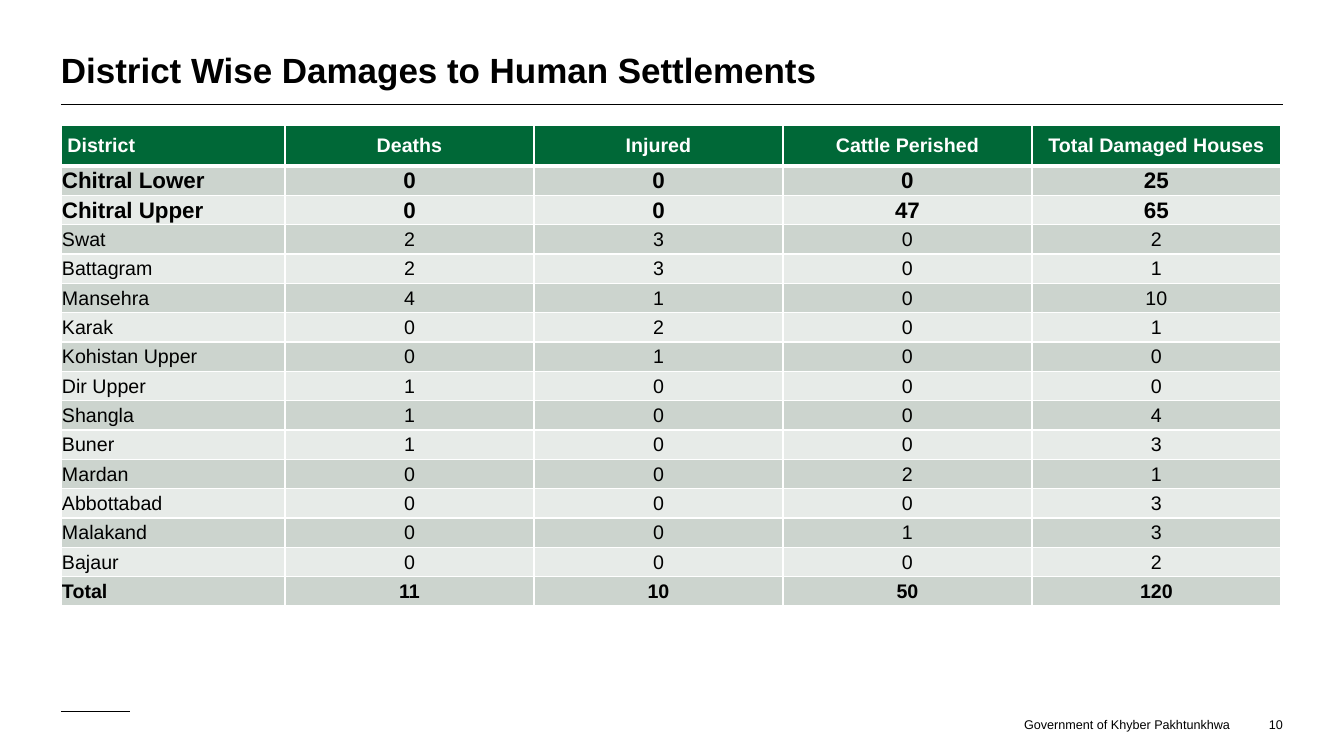
from dataclasses import dataclass

from lxml.etree import SubElement
from pptx import Presentation
from pptx.dml.color import RGBColor
from pptx.enum.shapes import MSO_CONNECTOR
from pptx.enum.text import MSO_ANCHOR as Anchor, MSO_AUTO_SIZE as AutoSize, PP_ALIGN as Align
from pptx.oxml.ns import qn
from pptx.slide import Slide
from pptx.table import _Cell as Cell
from pptx.text.text import TextFrame
from pptx.util import Emu, Pt

FONT = "Arial"
BLACK = RGBColor(0x00, 0x00, 0x00)
WHITE = RGBColor(0xFF, 0xFF, 0xFF)
GREEN = RGBColor(0x00, 0x68, 0x37)
BANDS = (RGBColor(0xCC, 0xD4, 0xCE), RGBColor(0xE7, 0xEB, 0xE8))

SLIDE_W, SLIDE_H = 1344, 756
LEFT, RIGHT = 61, 1283
TABLE_TOP = 125
HEADER_H, BODY_H = 41, 440
COLUMN_WIDTHS = (224, 249, 249, 249, 249)

HEADERS = (" District", "Deaths", "Injured", "Cattle Perished", "Total Damaged Houses")


@dataclass(frozen=True)
class District:
    name: str
    deaths: int
    injured: int
    cattle: int
    houses: int
    size: int = 14
    bold: bool = False

    def texts(self) -> tuple[str, ...]:
        counts = (self.deaths, self.injured, self.cattle, self.houses)
        return (self.name, *map(str, counts))


@dataclass(frozen=True)
class Rule:
    y: int
    x2: int


@dataclass(frozen=True)
class Label:
    text: str
    x: int
    y: int
    w: int
    h: int
    align: Align
    anchor: Anchor
    wrap: bool


DISTRICTS = (
    District("Chitral Lower", 0, 0, 0, 25, size=16, bold=True),
    District("Chitral Upper", 0, 0, 47, 65, size=16, bold=True),
    District("Swat", 2, 3, 0, 2),
    District("Battagram", 2, 3, 0, 1),
    District("Mansehra", 4, 1, 0, 10),
    District("Karak", 0, 2, 0, 1),
    District("Kohistan Upper", 0, 1, 0, 0),
    District("Dir Upper", 1, 0, 0, 0),
    District("Shangla", 1, 0, 0, 4),
    District("Buner", 1, 0, 0, 3),
    District("Mardan", 0, 0, 2, 1),
    District("Abbottabad", 0, 0, 0, 3),
    District("Malakand", 0, 0, 1, 3),
    District("Bajaur", 0, 0, 0, 2),
    District("Total", 11, 10, 50, 120, bold=True),
)
RULES = (Rule(y=711, x2=130), Rule(y=104, x2=RIGHT))
LABELS = (
    Label("Government of Khyber Pakhtunkhwa", 1023, 717, 208, 15,
          Align.CENTER, Anchor.MIDDLE, wrap=False),
    Label("10", 1247, 717, 36, 15, Align.RIGHT, Anchor.BOTTOM, wrap=True),
)


def px(n: float) -> Emu:
    return Emu(round(n * 914400 / 100.8))


def write(tf: TextFrame, text: str, size: int, color: RGBColor = BLACK,
          bold: bool = False, align: Align = Align.LEFT) -> None:
    p = tf.paragraphs[0]
    p.alignment = align
    r = p.add_run()
    r.text = text
    r.font.name = FONT
    r.font.size = Pt(size)
    r.font.bold = bold
    r.font.color.rgb = color


def clear_margins(tf: TextFrame) -> None:
    tf.margin_left = tf.margin_right = tf.margin_top = tf.margin_bottom = 0


def add_title(s: Slide, text: str) -> None:
    sp = s.shapes.title
    sp.left, sp.top, sp.width, sp.height = px(LEFT), px(11), px(1120), px(80)
    tf = sp.text_frame
    clear_margins(tf)
    tf.word_wrap = True
    tf.auto_size = AutoSize.NONE
    tf.vertical_anchor = Anchor.BOTTOM
    write(tf, text, 25, bold=True)


def add_rule(s: Slide, rule: Rule) -> None:
    sp = s.shapes.add_connector(MSO_CONNECTOR.STRAIGHT, px(LEFT), px(rule.y),
                                px(rule.x2), px(rule.y))
    sp.line.color.rgb = BLACK
    sp.line.width = Pt(0.5)
    SubElement(sp._element.spPr, qn("a:effectLst"))


def add_label(s: Slide, label: Label) -> None:
    sp = s.shapes.add_textbox(px(label.x), px(label.y), px(label.w), px(label.h))
    tf = sp.text_frame
    clear_margins(tf)
    tf.word_wrap = label.wrap
    tf.auto_size = AutoSize.SHAPE_TO_FIT_TEXT
    tf.vertical_anchor = label.anchor
    write(tf, label.text, 9, align=label.align)


def add_borders(cell: Cell, top: int, bottom: int) -> None:
    tc_pr = cell._tc.get_or_add_tcPr()
    for side, width in (("L", 1), ("R", 1), ("T", top), ("B", bottom)):
        ln = SubElement(tc_pr, qn(f"a:ln{side}"), w=str(Pt(width)))
        fill = SubElement(ln, qn("a:solidFill"))
        SubElement(fill, qn("a:srgbClr"), val=str(WHITE))


def fill_cell(cell: Cell, text: str, size: int, color: RGBColor, bold: bool,
              align: Align, fill: RGBColor) -> None:
    cell.margin_left = cell.margin_right = cell.margin_top = px(1)
    cell.margin_bottom = 0
    cell.vertical_anchor = Anchor.MIDDLE
    cell.fill.solid()
    cell.fill.fore_color.rgb = fill
    write(cell.text_frame, text, size, color, bold, align)


def add_damage_table(s: Slide) -> None:
    table = s.shapes.add_table(
        len(DISTRICTS) + 1, len(HEADERS), px(LEFT), px(TABLE_TOP),
        px(sum(COLUMN_WIDTHS)), px(HEADER_H + BODY_H)).table
    for column, width in zip(table.columns, COLUMN_WIDTHS):
        column.width = px(width)
    for i, row in enumerate(table.rows):
        row.height = px(BODY_H / len(DISTRICTS) if i else HEADER_H)
        if i == 0:
            texts, size, bold, color, fill = HEADERS, 14, True, WHITE, GREEN
        else:
            d = DISTRICTS[i - 1]
            texts, size, bold, color = d.texts(), d.size, d.bold, BLACK
            fill = BANDS[(i - 1) % 2]
        for j, (cell, text) in enumerate(zip(row.cells, texts)):
            add_borders(cell, top=3 if i == 1 else 1, bottom=1 if i else 3)
            align = Align.CENTER if j else Align.LEFT
            fill_cell(cell, text, size, color, bold, align, fill)


def main() -> None:
    prs = Presentation()
    prs.slide_width, prs.slide_height = px(SLIDE_W), px(SLIDE_H)
    s = prs.slides.add_slide(prs.slide_layouts[5])

    # Title and thin rules
    add_title(s, "District Wise Damages to Human Settlements")
    for rule in RULES:
        add_rule(s, rule)

    # Damage figures
    add_damage_table(s)

    # Footer and slide number
    for label in LABELS:
        add_label(s, label)

    prs.save("out.pptx")


if __name__ == "__main__":
    main()
